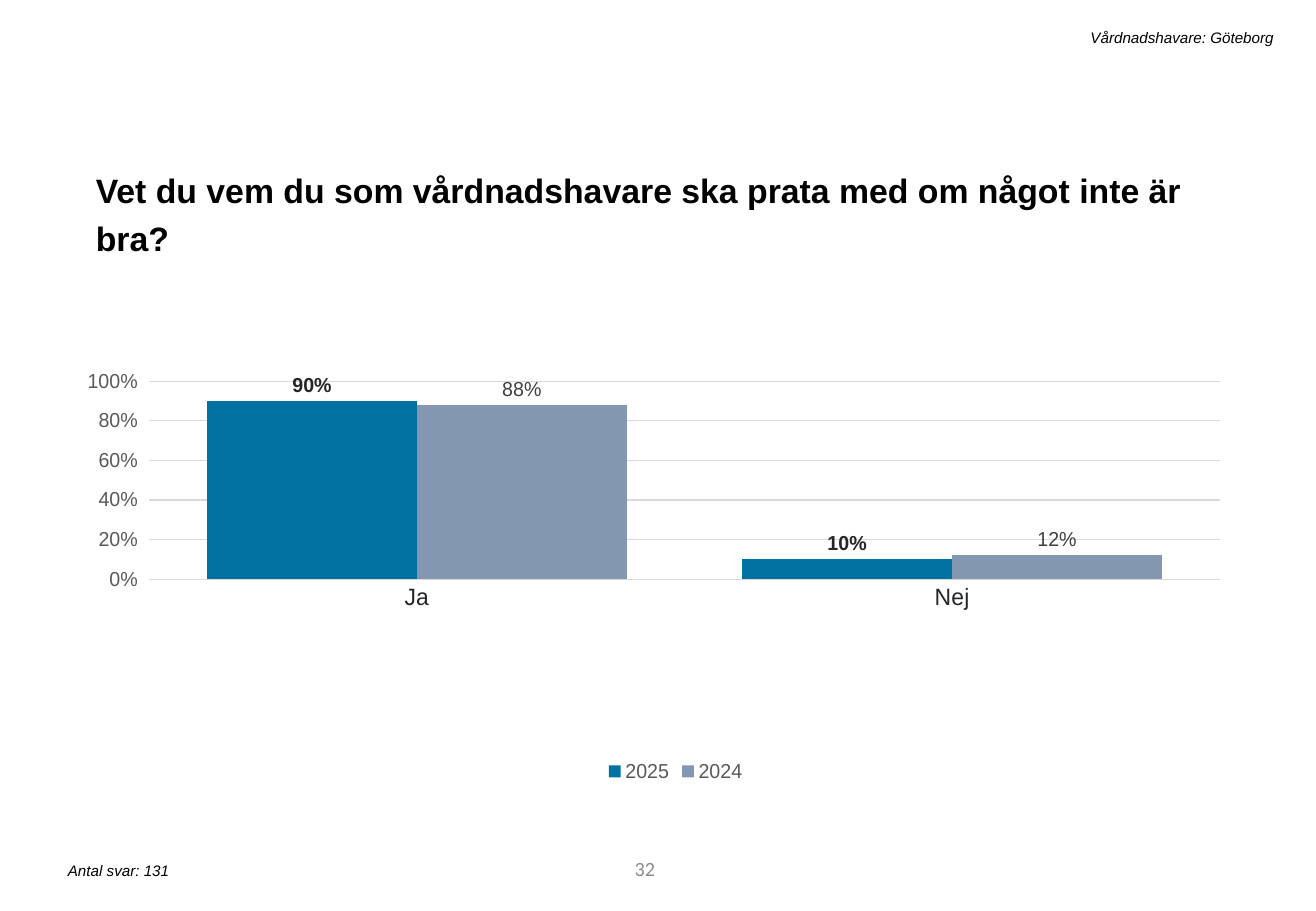
from dataclasses import dataclass

from lxml.etree import SubElement
from pptx import Presentation
from pptx.chart.chart import Chart
from pptx.chart.data import CategoryChartData
from pptx.dml.color import RGBColor
from pptx.enum.chart import (XL_CHART_TYPE, XL_LABEL_POSITION,
                             XL_LEGEND_POSITION, XL_TICK_MARK)
from pptx.enum.text import MSO_ANCHOR, MSO_AUTO_SIZE, PP_ALIGN
from pptx.oxml.ns import qn
from pptx.slide import Slide
from pptx.text.text import Font
from pptx.util import Inches, Pt

COLORS = {
    "black": "000000",
    "dark": "262626",
    "label": "404040",
    "axis": "595959",
    "page": "8C8C8C",
    "grid": "D9D9D9",
    "blue": "0071A1",
    "slate": "8497B0",
}


@dataclass
class Note:
    text: str
    left: float
    top: float
    width: float
    height: float
    size: float = 9
    color: str = "black"
    face: str = "Arial"
    bold: bool = False
    italic: bool = False
    align: PP_ALIGN = PP_ALIGN.LEFT
    anchor: MSO_ANCHOR = MSO_ANCHOR.TOP
    grow: bool = True
    spacing: float = 1.0
    before: float = 0


@dataclass
class Year:
    name: str
    shares: tuple[float, ...]
    fill: str
    color: str
    bold: bool


NOTES = [
    Note("32", 3.05, 6.95, 2.44, 0.4, size=12, color="page", face="Calibri",
         align=PP_ALIGN.RIGHT, anchor=MSO_ANCHOR.MIDDLE, grow=False),
    Note("Vet du vem du som vårdnadshavare ska prata med om något inte är bra?",
         0.69, 1.28, 9.4, 0.87, size=20, bold=True, spacing=1.2, before=10),
    Note("Antal svar: 131", 0.46, 7.04, 4.41, 0.25, italic=True),
    Note("Vårdnadshavare: Göteborg", 1.72, 0.18, 8.86, 0.25, italic=True,
         align=PP_ALIGN.RIGHT),
]

ANSWERS = ("Ja", "Nej")
YEARS = [
    Year("2025", (0.9, 0.1), "blue", "dark", True),
    Year("2024", (0.88, 0.12), "slate", "label", False),
]
PLOT = {"x": 0.025, "y": 0.154, "w": 0.966, "h": 0.413}


def paint(name: str) -> RGBColor:
    return RGBColor.from_string(COLORS[name])


def style(font: Font, size: float, color: str, face: str = "Arial",
          bold: bool = False, italic: bool = False) -> None:
    font.size = Pt(size)
    font.color.rgb = paint(color)
    font.name = face
    font.bold = bold
    font.italic = italic


def add_note(slide: Slide, note: Note) -> None:
    box = slide.shapes.add_textbox(Inches(note.left), Inches(note.top),
                                   Inches(note.width), Inches(note.height))
    frame = box.text_frame
    frame.text = note.text
    frame.word_wrap = True
    frame.vertical_anchor = note.anchor
    if note.grow:
        frame.auto_size = MSO_AUTO_SIZE.SHAPE_TO_FIT_TEXT
    para = frame.paragraphs[0]
    para.alignment = note.align
    para.line_spacing = note.spacing
    para.space_before = Pt(note.before)
    style(para.runs[0].font, note.size, note.color, note.face,
          note.bold, note.italic)


def place_plot(chart: Chart) -> None:
    area = chart._chartSpace.chart.plotArea
    for old in area.findall(qn("c:layout")):
        area.remove(old)
    layout = SubElement(area, qn("c:layout"))
    area.insert(0, layout)
    manual = SubElement(layout, qn("c:manualLayout"))
    rules = {"layoutTarget": "inner", "xMode": "edge", "yMode": "edge", **PLOT}
    for tag, value in rules.items():
        SubElement(manual, qn(f"c:{tag}")).set("val", str(value))


def style_axes(chart: Chart) -> None:
    answers = chart.category_axis
    answers.major_tick_mark = XL_TICK_MARK.NONE
    style(answers.tick_labels.font, 14, "dark")
    shares = chart.value_axis
    shares.minimum_scale = 0
    shares.maximum_scale = 1
    shares.major_unit = 0.2
    shares.major_tick_mark = XL_TICK_MARK.OUTSIDE
    shares.tick_labels.number_format = "0%"
    shares.tick_labels.number_format_is_linked = False
    style(shares.tick_labels.font, 12, "axis")
    shares.format.line.fill.background()
    for line in (answers.format.line, shares.major_gridlines.format.line):
        line.color.rgb = paint("grid")
        line.width = Pt(0.75)


def add_bars(slide: Slide) -> None:
    data = CategoryChartData(number_format="0%")
    data.categories = ANSWERS
    for year in YEARS:
        data.add_series(year.name, year.shares)
    chart = slide.shapes.add_chart(
        XL_CHART_TYPE.COLUMN_CLUSTERED, Inches(0.72), Inches(2.53),
        Inches(9.4), Inches(3.95), data).chart
    chart.has_title = False
    style(chart.font, 10, "black")
    chart.has_legend = True
    chart.legend.position = XL_LEGEND_POSITION.BOTTOM
    chart.legend.include_in_layout = False
    style(chart.legend.font, 12, "axis")
    style_axes(chart)
    place_plot(chart)
    plot = chart.plots[0]
    plot.vary_by_categories = False
    plot.gap_width = 55
    plot.overlap = 0
    for bars, year in zip(plot.series, YEARS):
        bars.format.fill.solid()
        bars.format.fill.fore_color.rgb = paint(year.fill)
        labels = bars.data_labels
        labels.show_value = True
        labels.position = XL_LABEL_POSITION.OUTSIDE_END
        labels.number_format = "0%"
        labels.number_format_is_linked = False
        style(labels.font, 12, year.color, bold=year.bold)


def main() -> None:
    deck = Presentation()
    deck.slide_width = Inches(10.83)
    deck.slide_height = Inches(7.5)
    slide = deck.slides.add_slide(deck.slide_layouts[6])
    for note in NOTES:
        add_note(slide, note)
    add_bars(slide)
    deck.save("out.pptx")


if __name__ == "__main__":
    main()
